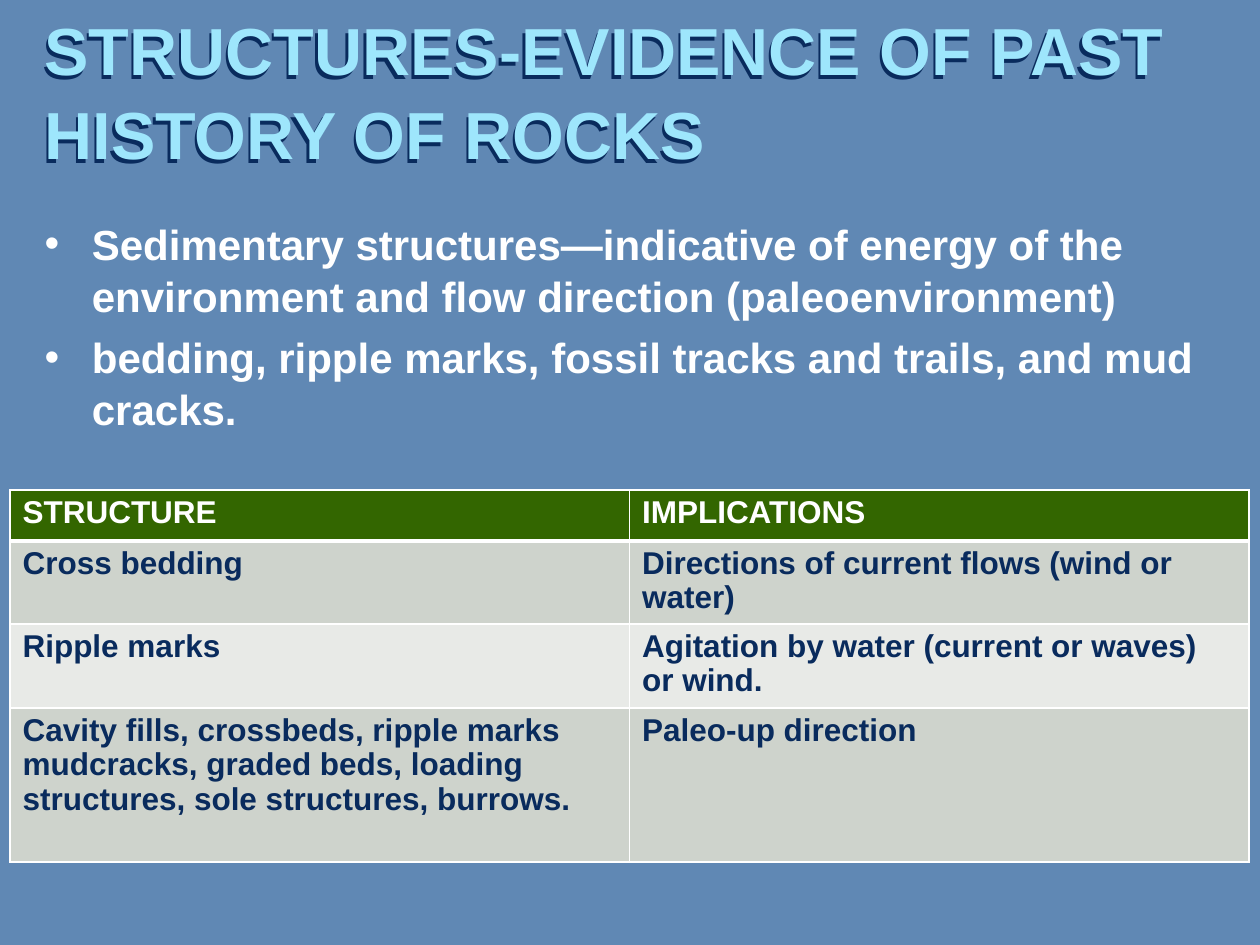
import pptx
import pptx.util
import pptx.dml.color
import pptx.enum.text
import pptx.oxml
import pptx.oxml.ns
import lxml.etree

TITLE = "STRUCTURES-EVIDENCE OF PAST HISTORY OF ROCKS"
POINTS = [
    "Sedimentary structures—indicative of energy of the environment and flow direction (paleoenvironment)",
    "bedding, ripple marks, fossil tracks and trails, and mud cracks.",
]
STRUCTURES = [
    ("STRUCTURE", "IMPLICATIONS"),
    ("Cross bedding", "Directions of current flows (wind or water)"),
    ("Ripple marks", "Agitation by water (current or waves) or wind."),
    ("Cavity fills, crossbeds, ripple marks mudcracks, graded beds, loading "
     "structures, sole structures, burrows.", "Paleo-up direction"),
]
ROW_HEIGHTS = [51, 83, 84, 154]
ROW_FILLS = ["336600", "CED3CC", "E8EAE7", "CED3CC"]
TITLE_BOX = (32, 21, 1197, 136)
BODY_BOX = (32, 210, 1197, 672)
TABLE_BOX = (10, 490, 1239, sum(ROW_HEIGHTS))
NAVY, WHITE, SKY = "092B5D", "FFFFFF", "9EE6FC"


def px(length):
    return pptx.util.Emu(round(length * 914400 / 126))


def colour(value):
    return pptx.dml.color.RGBColor.from_string(value)


def paint(fill, value):
    fill.solid()
    fill.fore_color.rgb = colour(value)


def write(paragraph, words, size, value, spacing):
    paragraph.line_spacing = spacing
    run = paragraph.add_run()
    run.text = words
    run.font.name = "Arial"
    run.font.size = pptx.util.Pt(size)
    run.font.bold = True
    run.font.color.rgb = colour(value)


def place(holder, box, anchor):
    holder.left, holder.top, holder.width, holder.height = map(px, box)
    holder.text_frame.word_wrap = True
    holder.text_frame.auto_size = pptx.enum.text.MSO_AUTO_SIZE.NONE
    holder.text_frame.vertical_anchor = anchor


def cast_shadow(holder, value):
    namespace = pptx.oxml.ns.nsdecls("a")
    holder._element.spPr.append(pptx.oxml.parse_xml(
        f'<a:effectLst {namespace}><a:outerShdw dist="35921" dir="7200000">'
        f'<a:srgbClr val="{value}"/></a:outerShdw></a:effectLst>'))


def border(cell, bottom_width):
    namespace = pptx.oxml.ns.nsdecls("a")
    properties = cell._tc.get_or_add_tcPr()
    widths = {"lnL": 1, "lnR": 1, "lnT": 1, "lnB": bottom_width}
    for position, (side, width) in enumerate(widths.items()):
        properties.insert(position, pptx.oxml.parse_xml(
            f'<a:{side} {namespace} w="{width * 12700}"><a:solidFill>'
            f'<a:srgbClr val="{WHITE}"/></a:solidFill></a:{side}>'))


deck = pptx.Presentation()
deck.slide_width, deck.slide_height = px(1260), px(945)
slide = deck.slides.add_slide(deck.slide_layouts[1])
paint(slide.background.fill, "6088B4")

title, body = slide.placeholders
place(title, TITLE_BOX, pptx.enum.text.MSO_ANCHOR.MIDDLE)
cast_shadow(title, NAVY)
heading = title.text_frame.paragraphs[0]
heading.alignment = pptx.enum.text.PP_ALIGN.LEFT
write(heading, TITLE, 38, SKY, 1.05)

place(body, BODY_BOX, pptx.enum.text.MSO_ANCHOR.TOP)
for index, point in enumerate(POINTS):
    frame = body.text_frame
    paragraph = frame.add_paragraph() if index else frame.paragraphs[0]
    if index == 0:
        paragraph.space_before = pptx.util.Pt(0)
    write(paragraph, point, 24, WHITE, 1.04)

table = slide.shapes.add_table(len(STRUCTURES), 2, *map(px, TABLE_BOX)).table
for column in table.columns:
    column.width = px(TABLE_BOX[2] / 2)
for index, entries in enumerate(STRUCTURES):
    table.rows[index].height = px(ROW_HEIGHTS[index])
    for cell, entry in zip(table.rows[index].cells, entries):
        paint(cell.fill, ROW_FILLS[index])
        border(cell, 1 if index else 3)
        write(cell.text_frame.paragraphs[0], entry, 18, NAVY if index else WHITE, 0.97)

deck.save("out.pptx")
